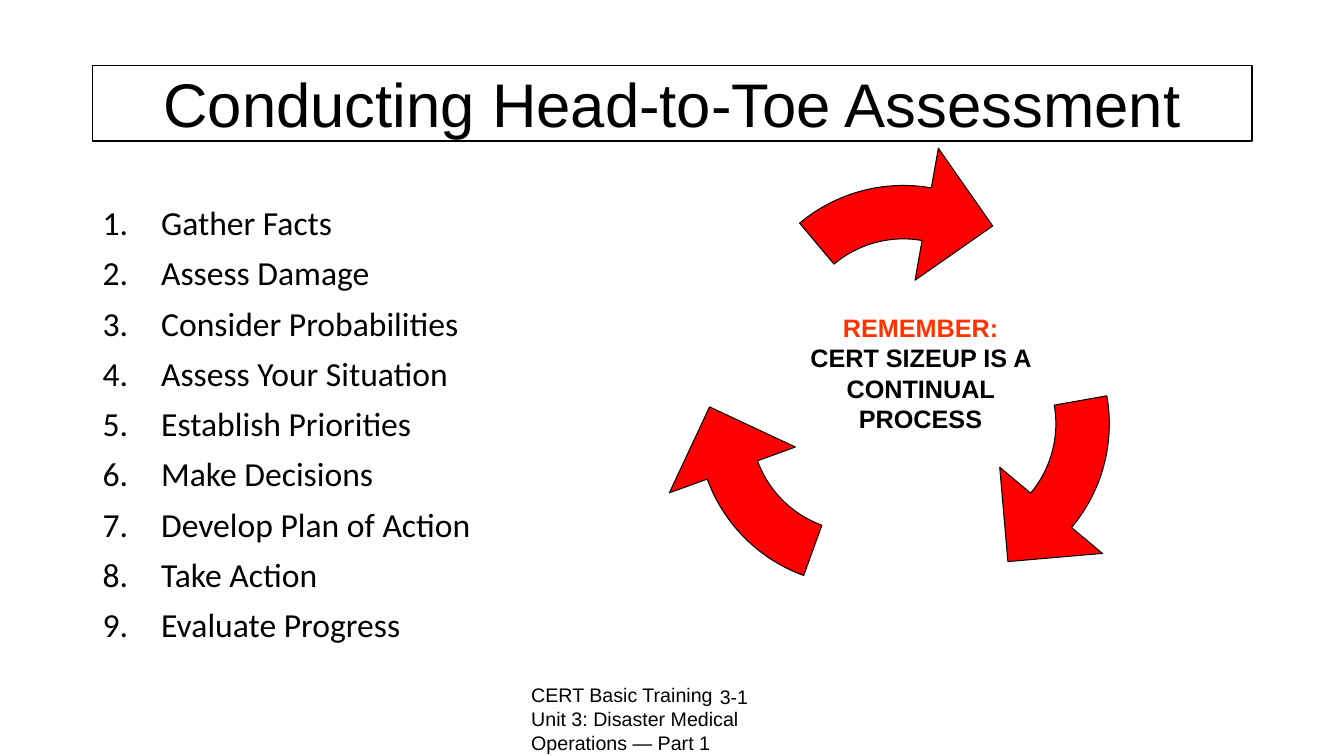
from math import cos, radians, sin, tan

from lxml import etree
from pptx import Presentation
from pptx.dml.color import RGBColor
from pptx.enum.shapes import MSO_SHAPE
from pptx.enum.text import MSO_ANCHOR, PP_ALIGN
from pptx.oxml.ns import qn
from pptx.util import Inches, Pt

COLORS = {"ink": "000000", "paper": "FFFFFF", "arrow": "FF0000", "alert": "FF3300"}

STEPS = [
    "Gather Facts",
    "Assess Damage",
    "Consider Probabilities",
    "Assess Your Situation",
    "Establish Priorities",
    "Make Decisions",
    "Develop Plan of Action",
    "Take Action",
    "Evaluate Progress",
]

CYCLE_CENTER = (8.96, 3.95)
CYCLE_OFFSET = 0.51
ARROW_TURNS = (0, 120, 240)
OUTER_RADIUS, INNER_RADIUS = 1.6, 1.07
TAIL_ANGLE, TOP_ANGLE, HEAD_ANGLE = -40, 0, 10
ARROW_HEAD = [(2, HEAD_ANGLE), (1.49, 36.5), (0.67, HEAD_ANGLE)]


def rgb(color):
    return RGBColor.from_string(COLORS[color])


def add_run(paragraph, text, size, font="Arial", color="ink", bold=False):
    run = paragraph.add_run()
    run.text = text
    run.font.size = Pt(size)
    run.font.name = font
    run.font.bold = bold
    run.font.color.rgb = rgb(color)


def add_textbox(slide, left, top, width, height, anchor=MSO_ANCHOR.TOP):
    box = slide.shapes.add_textbox(
        Inches(left), Inches(top), Inches(width), Inches(height))
    frame = box.text_frame
    frame.word_wrap = True
    frame.vertical_anchor = anchor
    return frame


def add_paragraph(frame, index):
    """Return the frame's first paragraph for index 0, otherwise a new one."""
    return frame.add_paragraph() if index else frame.paragraphs[0]


def style_shape(shape, fill, line_width):
    shape.shadow.inherit = False
    shape.fill.solid()
    shape.fill.fore_color.rgb = rgb(fill)
    shape.line.color.rgb = rgb("ink")
    shape.line.width = Pt(line_width)


def add_title(slide, text):
    banner = slide.shapes.add_shape(
        MSO_SHAPE.RECTANGLE, Inches(0.92), Inches(0.65), Inches(11.5), Inches(0.75))
    style_shape(banner, "paper", 1)
    frame = banner.text_frame
    frame.word_wrap = True
    frame.vertical_anchor = MSO_ANCHOR.MIDDLE
    frame.paragraphs[0].alignment = PP_ALIGN.CENTER
    add_run(frame.paragraphs[0], text, 44)


def number_paragraph(paragraph, indent):
    properties = paragraph._p.get_or_add_pPr()
    properties.set("marL", str(Inches(indent)))
    properties.set("indent", str(-Inches(indent)))
    etree.SubElement(properties, qn("a:buFont"), typeface="+mj-lt")
    etree.SubElement(properties, qn("a:buAutoNum"), type="arabicPeriod")


def add_steps(slide, steps):
    frame = add_textbox(slide, 0.92, 2, 11.5, 4.76)
    for index, step in enumerate(steps):
        paragraph = add_paragraph(frame, index)
        paragraph.line_spacing = 0.9
        paragraph.space_before = Pt(10)
        number_paragraph(paragraph, 0.58)
        add_run(paragraph, step, 24, "Calibri")


def polar(radius, angle, center=(OUTER_RADIUS, OUTER_RADIUS)):
    """Return the point at a clockwise angle from the top, around center."""
    return (center[0] + radius * sin(radians(angle)),
            center[1] - radius * cos(radians(angle)))


def arc_points(radius, start, end):
    """Return two Bézier control points and the end point of an arc."""
    reach = radius * 4 / 3 * tan(radians(end - start) / 4)
    leave = polar(reach, start + 90, polar(radius, start))
    arrive = polar(-reach, end + 90, polar(radius, end))
    return [leave, arrive, polar(radius, end)]


def add_segment(outline, command, points):
    segment = etree.SubElement(outline, qn(f"a:{command}"))
    for x, y in points:
        etree.SubElement(segment, qn("a:pt"), x=str(Inches(x)), y=str(Inches(y)))


def trace_arrow(outline):
    add_segment(outline, "moveTo", [polar(INNER_RADIUS, HEAD_ANGLE)])
    add_segment(outline, "cubicBezTo", arc_points(INNER_RADIUS, HEAD_ANGLE, TOP_ANGLE))
    add_segment(outline, "cubicBezTo", arc_points(INNER_RADIUS, TOP_ANGLE, TAIL_ANGLE))
    add_segment(outline, "lnTo", [polar(OUTER_RADIUS, TAIL_ANGLE)])
    add_segment(outline, "cubicBezTo", arc_points(OUTER_RADIUS, TAIL_ANGLE, TOP_ANGLE))
    add_segment(outline, "cubicBezTo", arc_points(OUTER_RADIUS, TOP_ANGLE, HEAD_ANGLE))
    for radius, angle in ARROW_HEAD:
        add_segment(outline, "lnTo", [polar(radius, angle)])
    etree.SubElement(outline, qn("a:close"))


def add_cycle_arrow(slide, turn):
    """Draw a curved arrow in a square frame turned clockwise by degrees."""
    center_x, center_y = polar(CYCLE_OFFSET, turn, CYCLE_CENTER)
    left, top = Inches(center_x - OUTER_RADIUS), Inches(center_y - OUTER_RADIUS)
    side = Inches(2 * OUTER_RADIUS)
    builder = slide.shapes.build_freeform(left, top)
    builder.add_line_segments(
        [(left + side, top), (left + side, top + side), (left, top + side)])
    arrow = builder.convert_to_shape()
    outline = arrow._element.find(".//" + qn("a:path"))
    for segment in list(outline):
        outline.remove(segment)
    trace_arrow(outline)
    arrow.rotation = turn
    style_shape(arrow, "arrow", 0.75)


def add_reminder(slide):
    reminder = add_textbox(slide, 7.92, 3.05, 2.42, 1.3).paragraphs[0]
    reminder.alignment = PP_ALIGN.CENTER
    add_run(reminder, "REMEMBER:", 18, color="alert", bold=True)
    add_run(reminder, " CERT SIZEUP IS A CONTINUAL PROCESS", 18, bold=True)


def add_footer(slide):
    unit = add_textbox(slide, 5.17, 6.93, 3, 0.4, MSO_ANCHOR.MIDDLE)
    lines = ("CERT Basic Training", "Unit 3: Disaster Medical Operations — Part 1")
    for index, line in enumerate(lines):
        add_run(add_paragraph(unit, index), line, 14)
    page = add_textbox(slide, 5.03, 6.71, 4.5, 0.4, MSO_ANCHOR.MIDDLE).paragraphs[0]
    page.alignment = PP_ALIGN.CENTER
    add_run(page, "3-1", 14)


def main():
    presentation = Presentation()
    presentation.slide_width = Inches(13.33)
    presentation.slide_height = Inches(7.5)
    slide = presentation.slides.add_slide(presentation.slide_layouts[6])
    add_steps(slide, STEPS)
    add_footer(slide)
    for turn in ARROW_TURNS:
        add_cycle_arrow(slide, turn)
    add_reminder(slide)
    add_title(slide, "Conducting Head-to-Toe Assessment")
    presentation.save("out.pptx")


if __name__ == "__main__":
    main()
